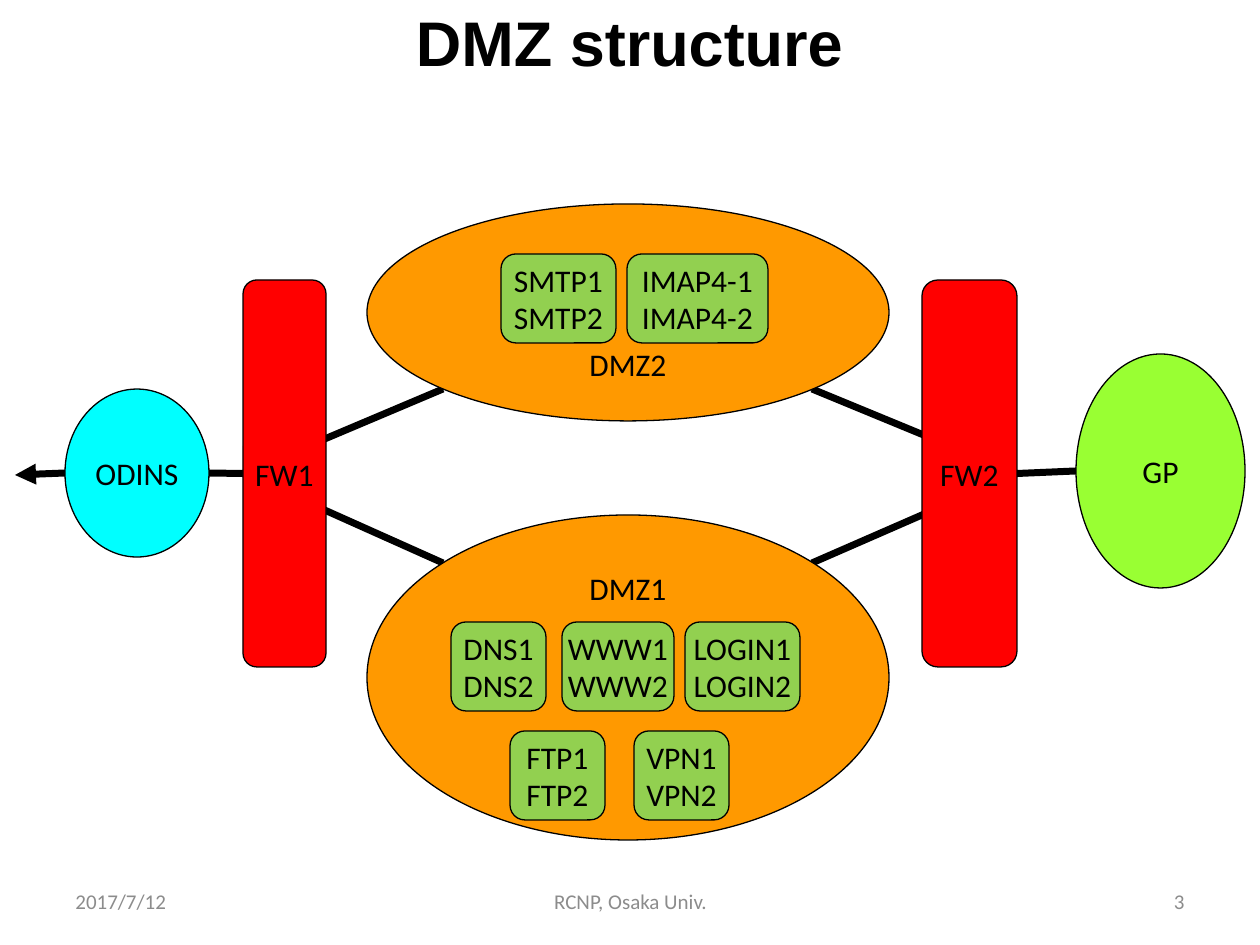
import pptx
import pptx.dml.color
import pptx.enum.shapes
import pptx.enum.text
import pptx.oxml
import pptx.oxml.ns
import pptx.util
from dataclasses import dataclass

PX = 914400 / 126
SHAPE = pptx.enum.shapes.MSO_SHAPE
ALIGN = pptx.enum.text.PP_ALIGN
ANCHOR = pptx.enum.text.MSO_ANCHOR
LEFT, RIGHT = 1, 3


@dataclass(frozen=True)
class Theme:
    ink: str = "000000"
    muted: str = "8C8C8C"
    outside: str = "00FFFF"
    inside: str = "99FF33"
    firewall: str = "FF0000"
    zone: str = "FF9900"
    server: str = "92D050"
    title_font: str = "Arial"
    body_font: str = "Calibri"
    title_size: int = 36
    body_size: int = 18
    footer_size: int = 12
    outline: float = 0.75
    link: int = 4


def emu(*lengths):
    return [pptx.util.Emu(round(length * PX)) for length in lengths]


def color(value):
    return pptx.dml.color.RGBColor.from_string(value)


class Diagram:
    def __init__(self, page, theme):
        self.page = page
        self.theme = theme

    def label(self, box, lines, ink, align=ALIGN.CENTER, anchor=ANCHOR.MIDDLE, wrap=True, **font):
        frame = box.text_frame
        frame.word_wrap = wrap
        frame.vertical_anchor = anchor
        for index, line in enumerate(lines):
            para = frame.paragraphs[0] if index == 0 else frame.add_paragraph()
            para.alignment = align
            span = para.add_run()
            span.text = line
            for name, value in font.items():
                setattr(span.font, name, value)
            span.font.color.rgb = color(ink)

    def title(self, text, area):
        box = self.page.shapes.title
        for name, value in zip(("left", "top", "width", "height"), emu(*area)):
            setattr(box, name, value)
        self.label(box, [text], self.theme.ink, name=self.theme.title_font,
                   size=pptx.util.Pt(self.theme.title_size), bold=True)

    def footer(self, text, area, align):
        box = self.page.shapes.add_textbox(*emu(*area))
        self.label(box, [text], self.theme.muted, align, name=self.theme.body_font,
                   size=pptx.util.Pt(self.theme.footer_size))

    def node(self, kind, area, fill, lines, anchor=ANCHOR.MIDDLE):
        box = self.page.shapes.add_shape(kind, *emu(*area))
        box.shadow.inherit = False
        box.fill.solid()
        box.fill.fore_color.rgb = color(fill)
        box.line.color.rgb = color(self.theme.ink)
        box.line.width = pptx.util.Pt(self.theme.outline)
        self.label(box, lines, self.theme.ink, anchor=anchor, wrap=False,
                   name=self.theme.body_font, size=pptx.util.Pt(self.theme.body_size))
        return box

    def server(self, name, left, top, width, mark=""):
        self.node(SHAPE.ROUNDED_RECTANGLE, (left, top, width, 89), self.theme.server,
                  [f"{name}{mark}{number}" for number in (1, 2)])

    def link(self, start, end, wall=None, side=None, arrow=False):
        line = self.page.shapes.add_connector(
            pptx.enum.shapes.MSO_CONNECTOR.STRAIGHT, *emu(*start, *end))
        if wall is not None:
            line.end_connect(wall, side)
        line.line.color.rgb = color(self.theme.ink)
        line.line.width = pptx.util.Pt(self.theme.link)
        properties = line._element.spPr
        if arrow:
            head = pptx.oxml.parse_xml(
                f'<a:headEnd {pptx.oxml.ns.nsdecls("a")} type="triangle"/>')
            properties.find(pptx.oxml.ns.qn("a:ln")).append(head)
        properties.append(
            pptx.oxml.parse_xml(f'<a:effectLst {pptx.oxml.ns.nsdecls("a")}/>'))
        self.page.shapes._spTree.insert(2, line._element)


def main():
    deck = pptx.Presentation()
    deck.slide_width, deck.slide_height = emu(1260, 945)
    page = deck.slides.add_slide(deck.slide_layouts[5])
    theme = Theme()
    diagram = Diagram(page, theme)

    diagram.title("DMZ structure", (94, -4, 1071, 90))
    for text, left, width, align in (
        ("2017/7/12", 63, 294, ALIGN.LEFT),
        ("RCNP, Osaka Univ.", 431, 399, ALIGN.CENTER),
        ("3", 903, 294, ALIGN.RIGHT),
    ):
        diagram.footer(text, (left, 876, width, 50), align)

    diagram.node(SHAPE.OVAL, (65, 389, 144, 168), theme.outside, ["ODINS"])
    diagram.node(SHAPE.OVAL, (1076, 354, 169, 234), theme.inside, ["GP"])
    outer, inner = (
        diagram.node(SHAPE.ROUNDED_RECTANGLE, (left, 280, width, 387), theme.firewall, [name])
        for name, left, width in (("FW1", 243, 83), ("FW2", 922, 95))
    )
    for name, top, height, anchor in (
        ("DMZ2", 204, 217, ANCHOR.BOTTOM),
        ("DMZ1", 515, 325, ANCHOR.TOP),
    ):
        diagram.node(SHAPE.OVAL, (367, top, 522, height), theme.zone, [name], anchor)

    for top, servers in (
        (254, (("SMTP", 501, 115), ("IMAP4", 627, 141, "-"))),
        (622, (("DNS", 451, 95), ("WWW", 562, 112), ("LOGIN", 685, 115))),
        (731, (("FTP", 510, 95), ("VPN", 634, 95))),
    ):
        for name, left, width, *mark in servers:
            diagram.server(name, left, top, width, *mark)

    for height in (389, 563):
        diagram.link((443, height), (243, 474), outer, LEFT)
        diagram.link((812, height), (1017, 474), inner, RIGHT)
    diagram.link((209, 473), (243, 474), outer, LEFT)
    diagram.link((1076, 471), (1017, 474), inner, RIGHT)
    diagram.link((15, 475), (65, 473), arrow=True)

    deck.save("out.pptx")


if __name__ == "__main__":
    main()
